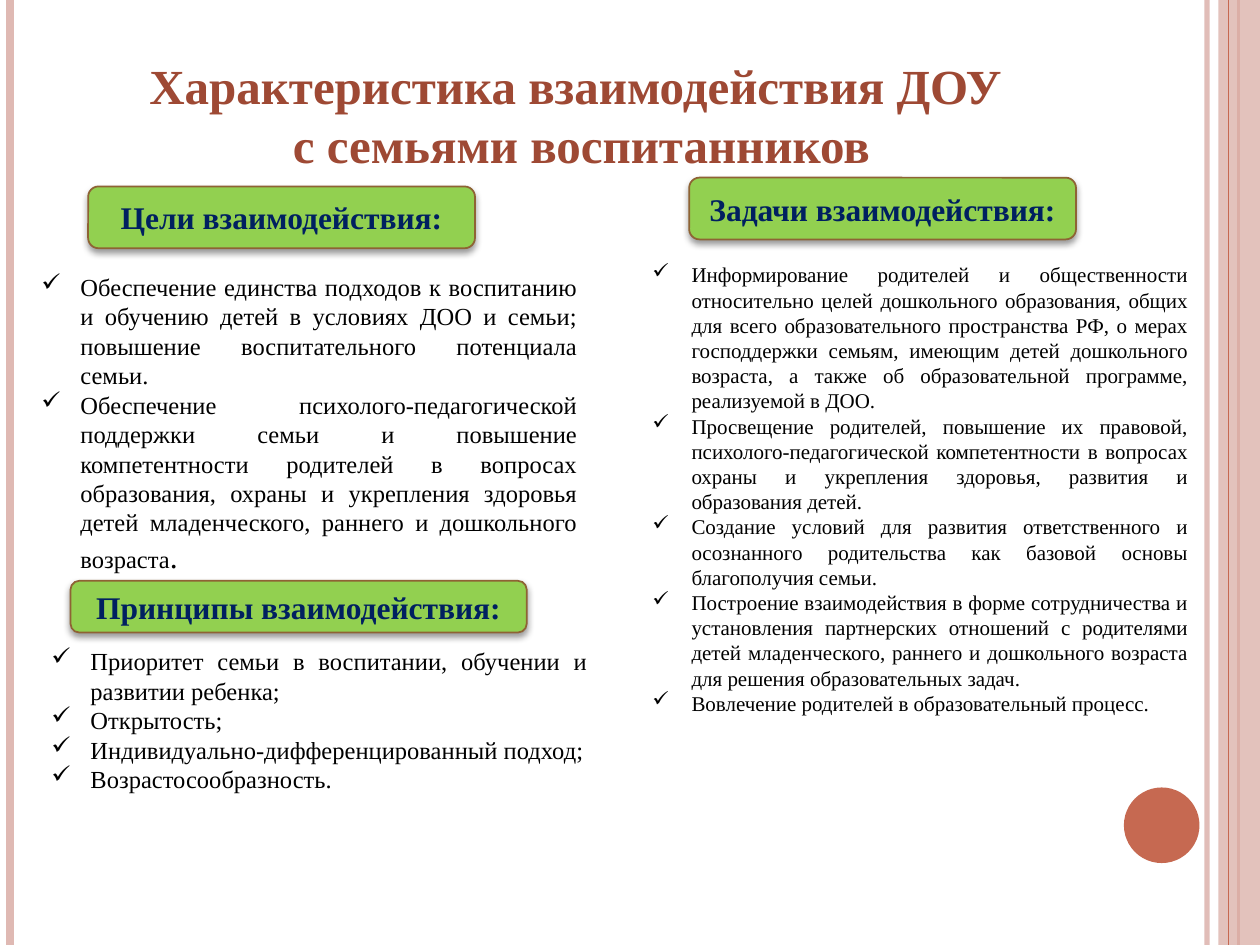
from dataclasses import dataclass

from lxml import etree
from pptx import Presentation
from pptx.dml import color
from pptx.enum import shapes, text
from pptx.oxml import ns
from pptx.util import Inches, Pt

COLUMNS, ROWS = 100, 75
SLIDE_WIDTH, SLIDE_HEIGHT = Inches(10), Inches(7.5)


@dataclass(frozen=True)
class Theme:
    font: str = "Times New Roman"
    title: str = "9E4934"
    heading: str = "002060"
    body: str = "000000"
    badge: str = "92D050"
    badge_line: str = "8E6334"
    pale: str = "DFB9B3"
    accent: str = "C66951"
    shadow: str = "000000"
    title_size: int = 28
    heading_size: int = 18
    large_size: int = 14
    small_size: int = 12


THEME = Theme()


@dataclass(frozen=True)
class Box:
    left: float
    top: float
    width: float
    height: float

    def inner(self, left, top, width, height):
        return Box(self.left + left, self.top + top, width, height)

    def lengths(self):
        column, row = SLIDE_WIDTH / COLUMNS, SLIDE_HEIGHT / ROWS
        return [round(value * unit) for value, unit in (
            (self.left, column), (self.top, row),
            (self.width, column), (self.height, row))]


def rgb(value):
    return color.RGBColor.from_string(value)


def add_element(parent, tag, **attributes):
    return etree.SubElement(parent, ns.qn(tag), attributes)


def set_alpha(format_element, percent):
    for value in format_element.iter(ns.qn("a:srgbClr")):
        add_element(value, "a:alpha", val=str(percent * 1000))


def style(paragraph, size, value, alignment, bold=False):
    paragraph.alignment = alignment
    font = paragraph.font
    font.name, font.size, font.bold = THEME.font, Pt(size), bold
    font.color.rgb = rgb(value)


def add_filled(slide, kind, box, fill):
    shape = slide.shapes.add_shape(kind, *box.lengths())
    shape.shadow.inherit = False
    shape.fill.solid()
    shape.fill.fore_color.rgb = rgb(fill)
    shape.line.fill.background()
    return shape


def add_stripe(slide, box, column, value, width, opacity=100):
    left, top, _, height = box.inner(column, 0, 0, box.height).lengths()
    stripe = slide.shapes.add_connector(
        shapes.MSO_CONNECTOR.STRAIGHT, left, top, left, top + height)
    stripe.line.color.rgb = rgb(value)
    stripe.line.width = Pt(width)
    properties = stripe._element.spPr
    set_alpha(properties, opacity)
    add_element(properties, "a:effectLst")


def add_frame(slide, box):
    add_stripe(slide, box, 95.8, THEME.pale, 3, 93)
    add_stripe(slide, box, 0.8, THEME.pale, 4.5)
    add_stripe(slide, box, 98.3, THEME.accent, 1.5)
    band = add_filled(slide, shapes.MSO_SHAPE.RECTANGLE,
                      box.inner(96.7, 0, 3.3, box.height), THEME.pale)
    set_alpha(band._element.spPr, 87)
    add_stripe(slide, box, 97.5, THEME.accent, 0.75)
    add_filled(slide, shapes.MSO_SHAPE.OVAL,
               box.inner(89.2, 62.5, 6, 6), THEME.accent)


def add_text_frame(slide, box):
    frame = slide.shapes.add_textbox(*box.lengths()).text_frame
    frame.word_wrap = True
    frame.auto_size = text.MSO_AUTO_SIZE.SHAPE_TO_FIT_TEXT
    return frame


def add_paragraphs(frame, lines):
    for index, line in enumerate(lines):
        paragraph = frame.add_paragraph() if index else frame.paragraphs[0]
        paragraph.add_run().text = line
        yield paragraph


def add_title(slide, box, lines):
    for paragraph in add_paragraphs(add_text_frame(slide, box), lines):
        style(paragraph, THEME.title_size, THEME.title,
              text.PP_ALIGN.CENTER, bold=True)


def add_badge(slide, box, heading):
    badge = add_filled(slide, shapes.MSO_SHAPE.ROUNDED_RECTANGLE, box, THEME.badge)
    badge.line.color.rgb = rgb(THEME.badge_line)
    badge.line.width = Pt(1)
    effects = badge._element.spPr.find(ns.qn("a:effectLst"))
    shadow = add_element(effects, "a:outerShdw", blurRad=str(Pt(4)),
                         dist=str(Pt(2)), dir="5400000", rotWithShape="0")
    add_element(shadow, "a:srgbClr", val=THEME.shadow)
    set_alpha(shadow, 40)
    frame = badge.text_frame
    frame.word_wrap = True
    frame.vertical_anchor = text.MSO_ANCHOR.MIDDLE
    paragraph = frame.paragraphs[0]
    paragraph.text = heading
    style(paragraph, THEME.heading_size, THEME.heading,
          text.PP_ALIGN.CENTER, bold=True)


def add_checklist(slide, box, items, size):
    indent = Inches(0.31)
    paragraphs = list(add_paragraphs(add_text_frame(slide, box), items))
    for paragraph in paragraphs:
        style(paragraph, size, THEME.body, text.PP_ALIGN.JUSTIFY)
        properties = paragraph._p.get_or_add_pPr()
        properties.set("marL", str(indent))
        properties.set("indent", str(-indent))
        bullet = etree.Element(ns.qn("a:buChar"), char="✓")
        properties.find(ns.qn("a:defRPr")).addprevious(bullet)
    return paragraphs


def add_section(slide, box, badge, heading, items, size):
    add_badge(slide, box.inner(*badge), heading)
    return add_checklist(slide, box, items, size)


def main():
    presentation = Presentation()
    presentation.slide_width, presentation.slide_height = SLIDE_WIDTH, SLIDE_HEIGHT
    slide = presentation.slides.add_slide(presentation.slide_layouts[6])
    add_frame(slide, Box(0, 0, COLUMNS, ROWS))
    add_title(slide, Box(5.5, 3.9, 81.3, 10.4), [
        "Характеристика взаимодействия ДОУ ",
        "с семьями воспитанников"])
    goals = add_section(
        slide, Box(2.3, 21.1, 44.5, 25.2), (4.7, -6.3, 30.7, 4.9),
        "Цели взаимодействия:", [
            "Обеспечение единства подходов к воспитанию и обучению детей в условиях ДОО и семьи; повышение воспитательного потенциала семьи.",
            "Обеспечение психолого-педагогической поддержки семьи и повышение компетентности родителей в вопросах образования, охраны и укрепления здоровья детей младенческого, раннего и дошкольного возраста"],
        THEME.large_size)
    full_stop = goals[-1].add_run()
    full_stop.text = "."
    full_stop.font.size = Pt(THEME.heading_size)
    add_section(
        slide, Box(3.1, 50.8, 44.5, 12.8), (2.5, -4.7, 36.2, 4.1),
        "Принципы взаимодействия:", [
            "Приоритет семьи в воспитании, обучении и развитии ребенка;",
            "Открытость;",
            "Индивидуально-дифференцированный подход;",
            "Возрастосообразность."],
        THEME.large_size)
    add_section(
        slide, Box(50.8, 20.3, 44.5, 37.4), (3.9, -6.2, 30.7, 4.9),
        "Задачи взаимодействия:", [
            "Информирование родителей и общественности относительно целей дошкольного образования, общих для всего образовательного пространства РФ, о мерах господдержки семьям, имеющим детей дошкольного возраста, а также об образовательной программе, реализуемой в ДОО.",
            "Просвещение родителей, повышение их правовой, психолого-педагогической компетентности в вопросах охраны и укрепления здоровья, развития и образования детей.",
            "Создание условий для развития ответственного и осознанного родительства как базовой основы благополучия семьи.",
            "Построение взаимодействия в форме сотрудничества и установления партнерских отношений с родителями детей младенческого, раннего и дошкольного возраста для решения образовательных задач.",
            "Вовлечение родителей в образовательный процесс."],
        THEME.small_size)
    presentation.save("out.pptx")


if __name__ == "__main__":
    main()
